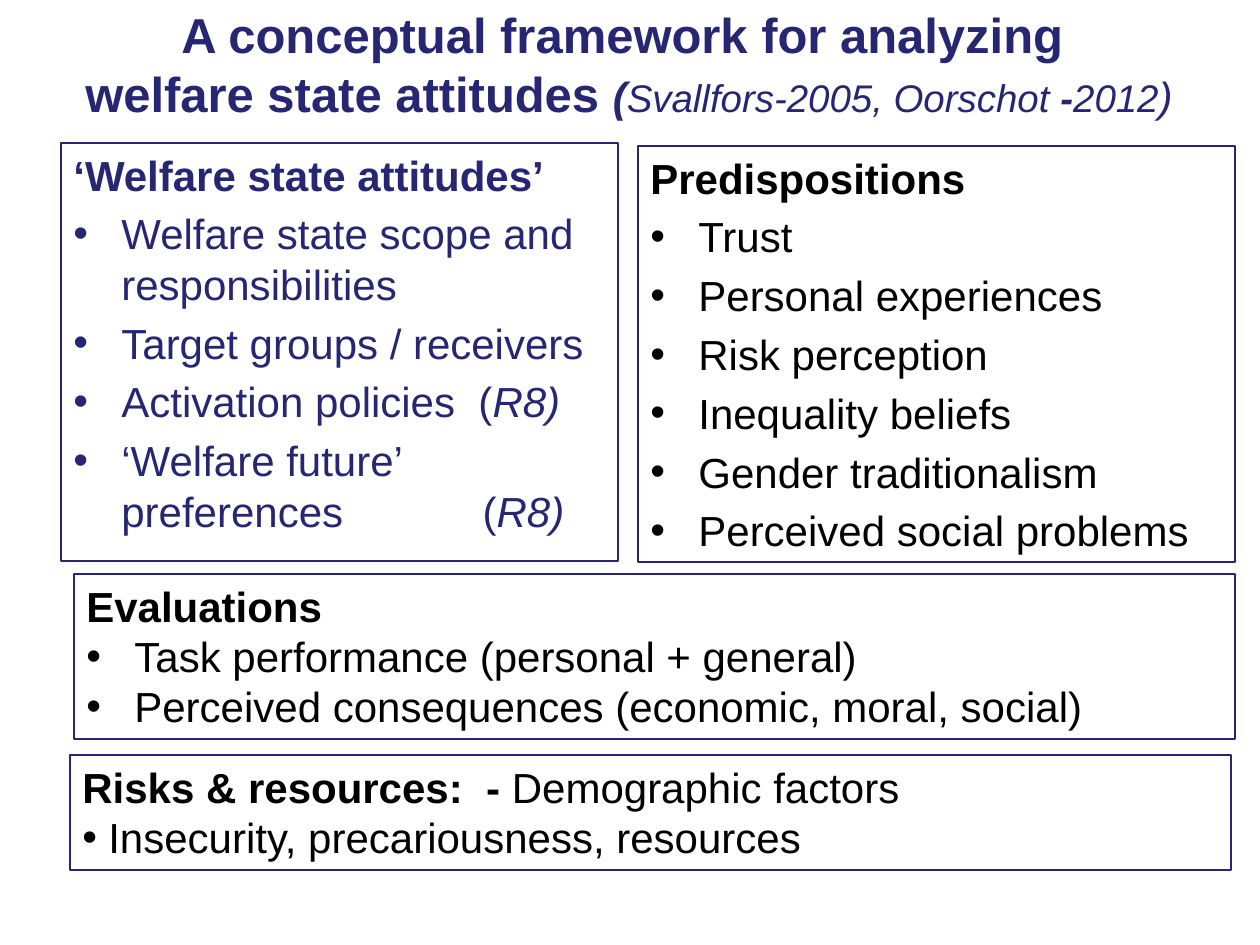
from lxml import etree
from pptx import Presentation
from pptx.dml.color import RGBColor
from pptx.enum.shapes import MSO_SHAPE
from pptx.enum.text import MSO_ANCHOR, PP_ALIGN
from pptx.oxml.ns import qn
from pptx.util import Emu, Pt

EMU_PER_PX = 914400 / 126
NAVY = RGBColor(0x26, 0x26, 0x73)
BLACK = RGBColor(0, 0, 0)
RECTANGLE = MSO_SHAPE.RECTANGLE
TOP, MIDDLE = MSO_ANCHOR.TOP, MSO_ANCHOR.MIDDLE
LEFT, CENTER = PP_ALIGN.LEFT, PP_ALIGN.CENTER

FONT = "Arial"
TITLE_SIZE = 28
BODY_SIZE = 24
BULLET_INDENT = 48
BOLD = {"bold": True}
ITALIC = {"italic": True}
REFERENCE = {"size": Pt(22), "italic": True}
BRACKET = {"size": Pt(24), "italic": True}

TITLE_LINES = [
    [("A conceptual framework for analyzing ", BOLD)],
    [
        ("welfare state attitudes ", BOLD),
        ("(", BRACKET | BOLD),
        ("Svallfors-2005, Oorschot ", REFERENCE),
        ("-", REFERENCE | BOLD),
        ("2012", REFERENCE),
        (")", BRACKET),
    ],
]
ATTITUDES = [
    "Welfare state scope and responsibilities",
    "Target groups / receivers",
    [("Activation policies  (", {}), ("R8)", ITALIC)],
    [("‘Welfare future’ preferences", {}), (" ", {"spacing": 73}),
     ("(", {}), ("R8)", ITALIC)],
]
PREDISPOSITIONS = [
    "Trust", "Personal experiences", "Risk perception", "Inequality beliefs",
    "Gender traditionalism", "Perceived social problems",
]
EVALUATIONS = [
    "Task performance (personal + general)",
    "Perceived consequences (economic, moral, social)",
]
RISKS_HEADING = [("Risks & resources:  - ", BOLD), ("Demographic factors", {})]
RISKS = ["Insecurity, precariousness, resources"]


def px(n):
    return Emu(round(n * EMU_PER_PX))


def add_runs(p, runs, size, color):
    """Add (text, format) pairs; "spacing" widens the run's letters, in points."""
    for text, fmt in runs:
        r = p.add_run()
        r.text = text
        r.font.color.rgb = color
        values = {"name": FONT, "size": Pt(size), "bold": False, "italic": False} | fmt
        spacing = values.pop("spacing", None)
        for name, value in values.items():
            setattr(r.font, name, value)
        if spacing:
            r.font._element.set("spc", str(spacing * 100))


def set_bullet(p, indent):
    pPr = p._p.get_or_add_pPr()
    pPr.set("marL", str(px(indent)))
    pPr.set("indent", str(-px(indent)))
    etree.SubElement(pPr, qn("a:buFont")).set("typeface", FONT)
    etree.SubElement(pPr, qn("a:buChar")).set("char", "•")


def add_title(s, box, lines):
    tf = s.shapes.add_textbox(*map(px, box)).text_frame
    tf.word_wrap = True
    tf.vertical_anchor = MIDDLE
    p = tf.paragraphs[0]
    p.alignment = CENTER
    for i, runs in enumerate(lines):
        if i:
            p.add_line_break()
        add_runs(p, runs, TITLE_SIZE, NAVY)


def add_panel(s, box, heading, items, color=BLACK, space_before=0, indent=BULLET_INDENT):
    """Add an outlined box with a heading above a bulleted list."""
    sp = s.shapes.add_shape(RECTANGLE, *map(px, box))
    sp.shadow.inherit = False
    sp.fill.background()
    sp.line.color.rgb = NAVY
    sp.line.width = Pt(0.75)
    tf = sp.text_frame
    tf.word_wrap = True
    tf.vertical_anchor = TOP
    for i, item in enumerate([heading, *items]):
        p = tf.add_paragraph() if i else tf.paragraphs[0]
        p.alignment = LEFT
        p.space_before = Pt(space_before)
        if i:
            set_bullet(p, indent)
        plain = {} if i else BOLD
        runs = [(item, plain)] if isinstance(item, str) else item
        add_runs(p, runs, BODY_SIZE, color)


def main():
    prs = Presentation()
    prs.slide_width, prs.slide_height = px(1260), px(945)
    s = prs.slides.add_slide(prs.slide_layouts[6])
    add_title(s, (62, 0, 1134, 127), TITLE_LINES)
    add_panel(s, (61, 143, 557, 418), "‘Welfare state attitudes’", ATTITUDES,
              color=NAVY, space_before=4.8)
    add_panel(s, (638, 146, 597, 416), "Predispositions", PREDISPOSITIONS,
              space_before=4.8)
    add_panel(s, (74, 574, 1161, 165), "Evaluations", EVALUATIONS)
    add_panel(s, (70, 755, 1161, 115), RISKS_HEADING, RISKS, indent=26)
    prs.save("out.pptx")


if __name__ == "__main__":
    main()
